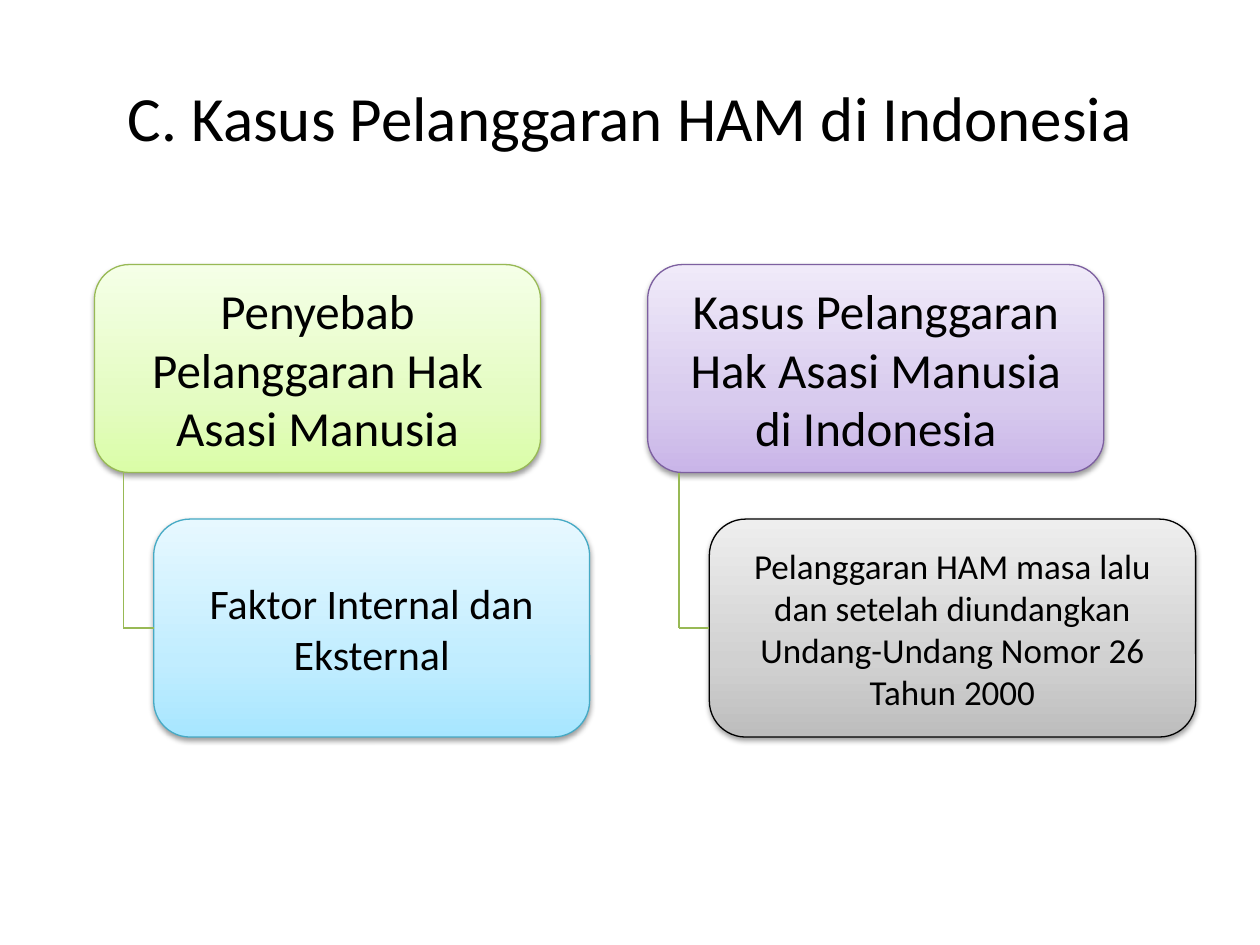
from dataclasses import dataclass

from lxml.etree import SubElement
from pptx import Presentation
from pptx.dml.color import RGBColor
from pptx.enum.shapes import MSO_CONNECTOR as Connector, MSO_SHAPE as Shape
from pptx.enum.text import MSO_ANCHOR as Anchor, PP_ALIGN as Align
from pptx.oxml.ns import qn
from pptx.util import Inches, Pt

BLACK = "000000"
BRANCH_COLOR = "98B955"
PARENT_TOP, PARENT_HEIGHT = 2.1, 1.65
CHILD_TOP, CHILD_HEIGHT = 4.12, 1.73
BRANCH_INDENT = 0.24


@dataclass(frozen=True)
class Card:
    text: str
    size: int
    left: float
    width: float
    gradient: tuple[str, str, str]
    outline: str


@dataclass(frozen=True)
class Topic:
    parent: Card
    child: Card


TOPICS = (
    Topic(
        Card("Penyebab Pelanggaran Hak Asasi Manusia", 28, 0.75, 3.54,
             ("DAFDA7", "E4FCC2", "F5FFE7"), "98B955"),
        Card("Faktor Internal dan Eksternal", 24, 1.22, 3.46,
             ("A7E6FF", "C1EDFF", "E7F8FF"), "46AAC5"),
    ),
    Topic(
        Card("Kasus Pelanggaran Hak Asasi Manusia di Indonesia", 28, 5.14, 3.62,
             ("C9B5E8", "D8CBEE", "F0EAF9"), "7D60A0"),
        Card("Pelanggaran HAM masa lalu dan setelah diundangkan "
             "Undang-Undang Nomor 26 Tahun 2000", 20, 5.63, 3.86,
             ("BDBDBD", "D1D1D1", "EEEEEE"), BLACK),
    ),
)


def color(value: str) -> RGBColor:
    return RGBColor.from_string(value)


def write_text(box, text: str, size: int) -> None:
    frame = box.text_frame
    frame.word_wrap = True
    frame.vertical_anchor = Anchor.MIDDLE
    para = frame.paragraphs[0]
    para.text = text
    para.alignment = Align.CENTER
    para.font.name = "Calibri"
    para.font.size = Pt(size)
    para.font.color.rgb = color(BLACK)


def fill_gradient(box, colors: tuple[str, str, str]) -> None:
    box.fill.gradient()
    box.fill.gradient_angle = 90
    stops = box._element.spPr.find(qn("a:gradFill")).find(qn("a:gsLst"))
    for stop in list(stops):
        stops.remove(stop)
    for position, value in zip((0, 35, 100), colors):
        stop = SubElement(stops, qn("a:gs"), pos=str(position * 1000))
        SubElement(stop, qn("a:srgbClr"), val=value)


def add_shadow(box) -> None:
    box.shadow.inherit = False
    effects = box._element.spPr.find(qn("a:effectLst"))
    shadow = SubElement(effects, qn("a:outerShdw"), blurRad=str(Pt(3.1)),
                        dist=str(Pt(1.6)), dir="5400000", rotWithShape="0")
    tint = SubElement(shadow, qn("a:srgbClr"), val=BLACK)
    SubElement(tint, qn("a:alpha"), val="38000")


def add_card(page, card: Card, top: float, height: float):
    box = page.shapes.add_shape(Shape.ROUNDED_RECTANGLE, Inches(card.left), Inches(top),
                                Inches(card.width), Inches(height))
    fill_gradient(box, card.gradient)
    box.line.color.rgb = color(card.outline)
    box.line.width = Pt(0.75)
    add_shadow(box)
    write_text(box, card.text, card.size)
    return box


def add_line(page, start: tuple[float, float], end: tuple[float, float]):
    line = page.shapes.add_connector(Connector.STRAIGHT, *map(Inches, start + end))
    line.line.color.rgb = color(BRANCH_COLOR)
    line.line.width = Pt(0.75)
    SubElement(line._element.spPr, qn("a:effectLst"))
    return line


def add_topic(page, topic: Topic) -> None:
    add_card(page, topic.parent, PARENT_TOP, PARENT_HEIGHT)
    child = add_card(page, topic.child, CHILD_TOP, CHILD_HEIGHT)
    middle = CHILD_TOP + CHILD_HEIGHT / 2
    trunk = topic.child.left - BRANCH_INDENT
    add_line(page, (trunk, PARENT_TOP + PARENT_HEIGHT), (trunk, middle))
    branch = add_line(page, (topic.child.left, middle), (trunk, middle))
    branch.begin_connect(child, 1)


def main() -> None:
    deck = Presentation()
    deck.slide_width, deck.slide_height = Inches(10), Inches(7.5)
    page = deck.slides.add_slide(deck.slide_layouts[6])
    title = page.shapes.add_textbox(Inches(0.5), Inches(0.3), Inches(9), Inches(1.25))
    write_text(title, "C. Kasus Pelanggaran HAM di Indonesia", 36)
    for topic in TOPICS:
        add_topic(page, topic)
    deck.save("out.pptx")


if __name__ == "__main__":
    main()
